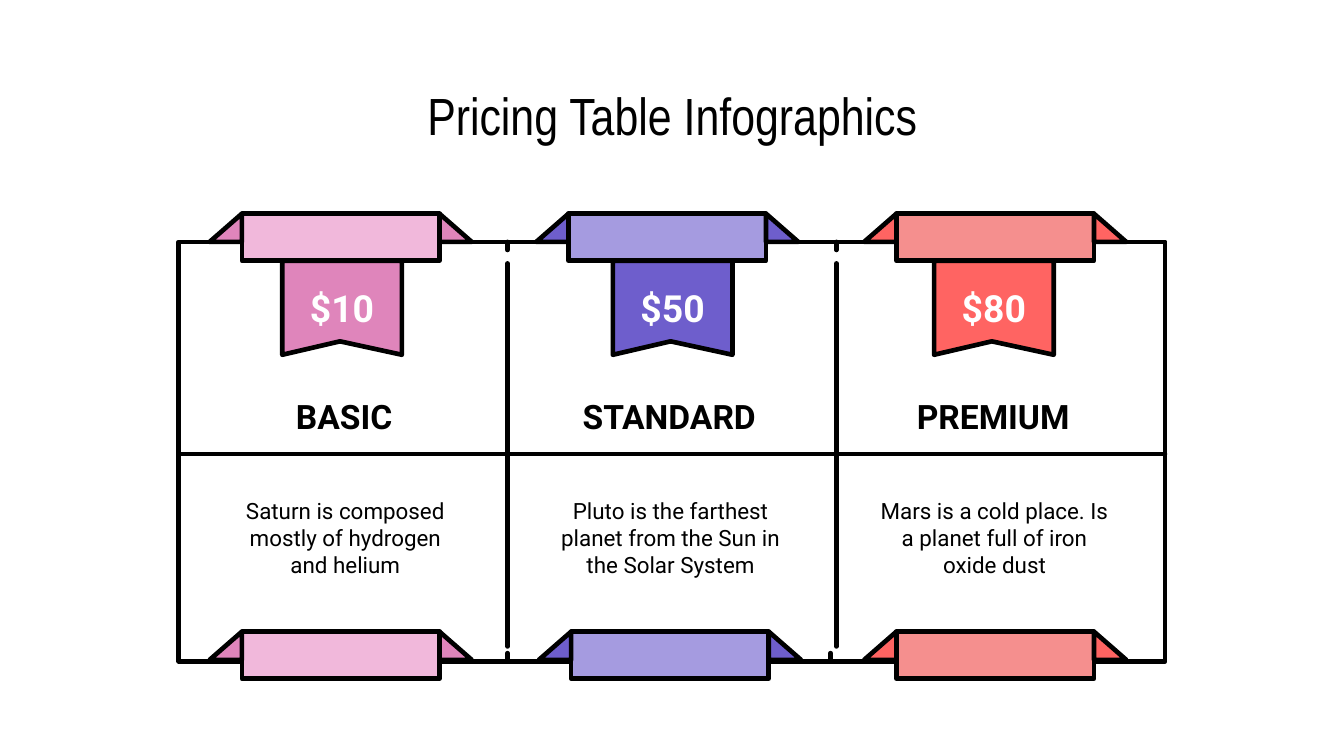
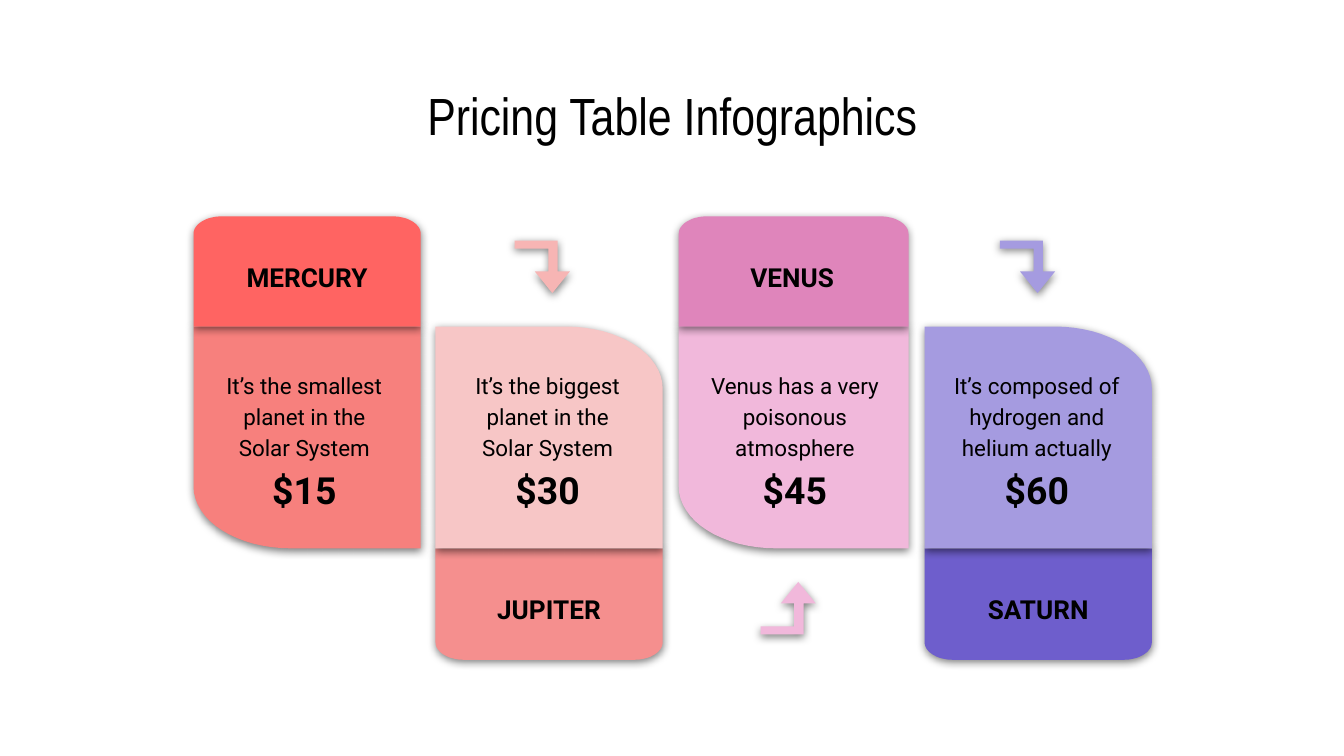
from math import cos, sin, pi
from lxml.etree import SubElement as Sub
from pptx import Presentation
from pptx.dml.color import RGBColor
from pptx.enum.shapes import MSO_CONNECTOR as Link, MSO_SHAPE as Kind
from pptx.enum.text import MSO_ANCHOR as Anchor, PP_ALIGN as Align
from pptx.oxml.ns import qn
from pptx.util import Inches, Pt

hue = RGBColor.from_string
cell = Inches(1)
black, white = "000000", "FFFFFF"
pink, rose = "F1B8DB", "DF85BB"
lilac, violet = "A59BE0", "6E5ECC"
coral, red = "F58F8E", "FF6462"


def form(slide, spot, fill=None, edge=None):
    if isinstance(spot, tuple):
        shape = slide.shapes.add_shape(Kind.RECTANGLE, *[int(n * cell) for n in spot])
    else:
        dots = [(x * 1000, y * 1000) for x, y in spot]
        pen = slide.shapes.build_freeform(*dots[0], scale=cell / 1000)
        pen.add_line_segments(dots[1:], close=True)
        shape = pen.convert_to_shape()
    shape.shadow.inherit = False
    if fill:
        shape.fill.solid()
        shape.fill.fore_color.rgb = hue(fill)
    else:
        shape.fill.background()
    if edge:
        shape.line.color.rgb = hue(black)
        shape.line.width = Pt(edge)
    else:
        shape.line.fill.background()
        glow = Sub(shape.element.spPr.find(qn("a:effectLst")), qn("a:outerShdw"),
                   blurRad="57150", dist="19050", dir="5400000", algn="bl", rotWithShape="0")
        tint = Sub(glow, qn("a:srgbClr"), val=black)
        Sub(tint, qn("a:alpha"), val="50000")
    return shape


def write(shape, text, size, bold=False, ink=black, face="Roboto", gap=1, hold=Anchor.MIDDLE):
    frame = shape.text_frame
    frame.text = text
    frame.word_wrap = True
    frame.vertical_anchor = hold
    frame.margin_left = frame.margin_right = cell // 10
    frame.margin_top = frame.margin_bottom = cell // 10
    line = frame.paragraphs[0]
    line.alignment = Align.CENTER
    line.line_spacing = gap
    font = line.runs[0].font
    font.size, font.bold, font.name = Pt(size), bold, face
    font.color.rgb = hue(ink)


deck = Presentation()
deck.slide_width = 10 * cell
deck.slide_height = int(5.625 * cell)
first, last = [deck.slides.add_slide(deck.slide_layouts[6]) for _ in range(2)]
for slide in (first, last):
    box = slide.shapes.add_textbox(*map(Inches, (2.56, 0.59, 4.88, 0.53)))
    write(box, "Pricing Table Infographics", 28, face="Arial Narrow")

left, top, wide, high = 1.33, 1.8, 7.34, 3.12
form(first, (left, top, wide, high), edge=2.5)

plans = [
    ("BASIC", "$10", "Saturn is composed mostly of hydrogen and helium",
     pink, rose, 1.8, 1.8, 2.1, 2.56),
    ("STANDARD", "$50", "Pluto is the farthest planet from the Sun in the Solar System",
     lilac, violet, 4.23, 4.25, 4.56, 4.98),
    ("PREMIUM", "$80", "Mars is a cold place. Is a planet full of iron oxide dust",
     coral, red, 6.67, 6.67, 6.95, 7.39),
]
for name, price, note, pale, deep, up, down, flag, mid in plans:
    for x, y in ((up, 1.59), (down, 4.7)):
        form(first, (x, y, 1.47, 0.35), pale, 2.5)
        for side, way in ((x, -1), (x + 1.47, 1)):
            form(first, [(side, y), (side + way * 0.24, y + 0.21), (side, y + 0.21)], deep, 2.5)
    tag = form(first, [(flag, 1.94), (flag + 0.89, 1.94), (flag + 0.89, 2.64),
                       (flag + 0.43, 2.54), (flag, 2.64)], deep, 2.5)
    write(tag, price, 20, True, white)
    box = first.shapes.add_textbox(*map(Inches, (mid - 1.14, 2.83, 2.28, 0.53)))
    write(box, name, 18, True)
    box = first.shapes.add_textbox(*map(Inches, (mid - 0.94, 3.6, 1.9, 0.79)))
    write(box, note, 12, hold=Anchor.TOP)

rules = [(left, 3.38, left + wide, 3.38, 2.25)]
for k in (1, 2):
    x = left + k * wide / 3
    foot = x if k == 1 else 6.18
    rules += [(x, 1.8, x, 1.86, 2.5), (x, 1.96, x, 4.81, 2.5), (foot, 4.86, foot, 4.92, 2.5)]
for *ends, thick in rules:
    rule = first.shapes.add_connector(Link.STRAIGHT, *map(Inches, ends))
    rule.line.color.rgb = hue(black)
    rule.line.width = Pt(thick)
    rule.get_or_add_ln().set("cap", "rnd")
    Sub(rule.element.spPr, qn("a:effectLst"))

bend = [(0.32, 0.23), (0.32, 0), (0, 0), (0, 0.06), (0.25, 0.06),
        (0.25, 0.23), (0.15, 0.23), (0.28, 0.39), (0.41, 0.23)]
signs = [(-1, -1), (1, -1), (1, 1), (-1, 1)]
cards = [
    ("MERCURY", "$15", "It’s the smallest planet in the Solar System",
     "F7807D", red, 1.44, 1.69, 1.51, None),
    ("JUPITER", "$30", "It’s the biggest planet in the Solar System",
     "F7C6C6", coral, 3.24, 1.69, 3.32, (3.83, "F7B5B4")),
    ("VENUS", "$45", "Venus has a very poisonous atmosphere",
     pink, rose, 5.05, 1.71, 5.16, (5.66, pink)),
    ("SATURN", "$60", "It’s composed of hydrogen and helium actually",
     lilac, violet, 6.88, 1.69, 6.96, (7.44, lilac)),
]
for k, (name, price, note, pale, deep, x, wide, inset, arrow) in enumerate(cards):
    low = k % 2
    if arrow:
        start, tint = arrow
        form(last, [(start + a, 1.79 + b if low else 4.72 - b) for a, b in bend], tint)
    body = (2.43, 1.65, pale, (1,) if low else (3,), 0.72, 0.46)
    head = (4.08, 0.83, deep, (2, 3), 0.21, 0.13) if low else (1.61, 0.82, deep, (0, 1), 0.21, 0.13)
    for y, high, fill, turns, rx, ry in ((head, body) if low else (body, head)):
        dots = []
        for turn, (h, v) in enumerate(signs):
            a, b, steps = (rx, ry, 16) if turn in turns else (0, 0, 0)
            for n in range(steps + 1):
                arc = pi + (turn + n / max(steps, 1)) * pi / 2
                dots.append((x + wide / 2 + h * (wide / 2 - a) + a * cos(arc),
                             y + high / 2 + v * (high / 2 - b) + b * sin(arc)))
        form(last, dots, fill)
    texts = [
        (name, (x + 0.09, 4.28 if low else 1.81, 1.51, 0.42), 14, True, 1.15, Anchor.TOP),
        (note, (inset, 2.64, 1.51, 0.87), 12, False, 1.15, Anchor.TOP),
        (price, (inset + 0.17, 3.42, 1.17, 0.44), 20, True, 1, Anchor.MIDDLE),
    ]
    for text, spot, size, bold, gap, hold in texts:
        box = last.shapes.add_textbox(*map(Inches, spot))
        write(box, text, size, bold, gap=gap, hold=hold)

deck.save("out.pptx")
